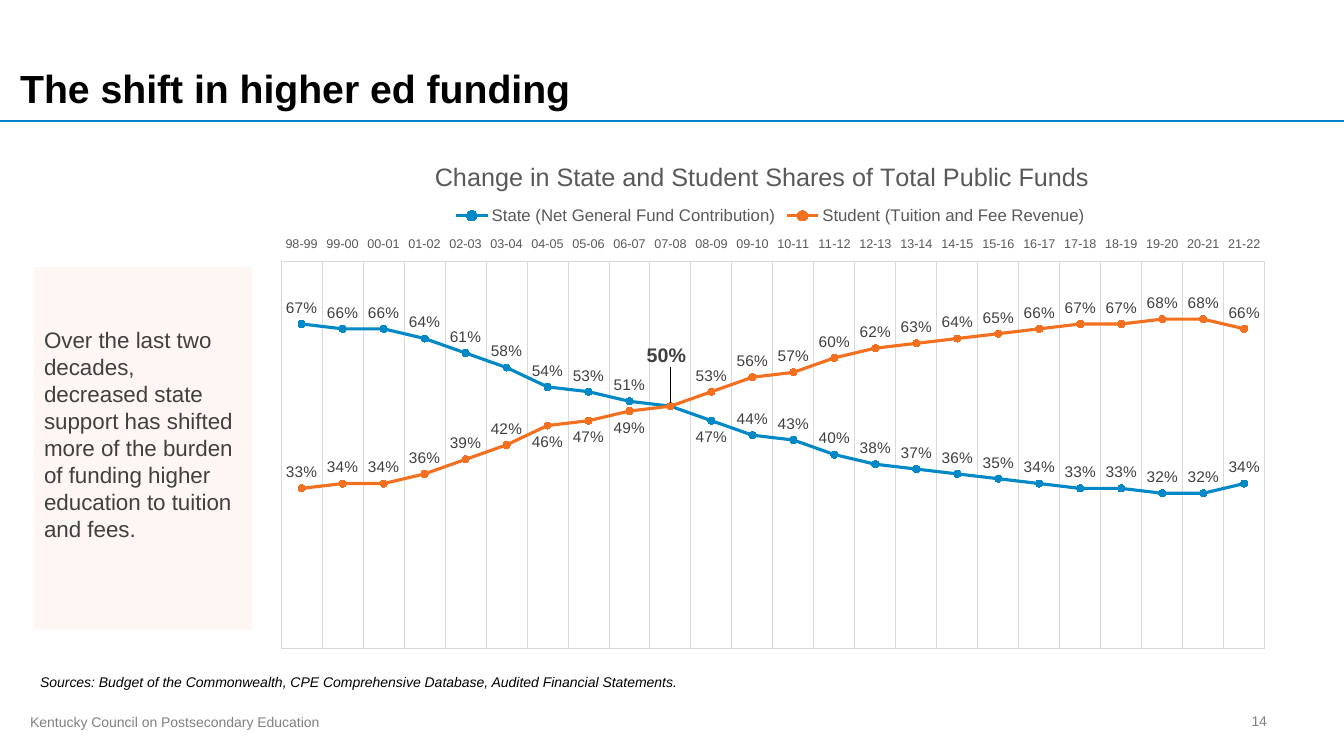
"""Build the slide on state and student shares of higher education funding."""
from lxml.etree import SubElement
from pptx import Presentation
from pptx.chart.data import CategoryChartData as Data
from pptx.dml.color import RGBColor as RGB
from pptx.enum.chart import XL_CHART_TYPE as Kind, XL_LABEL_POSITION as Spot
from pptx.enum.chart import XL_LEGEND_POSITION as Side, XL_MARKER_STYLE as Mark
from pptx.enum.chart import XL_TICK_LABEL_POSITION as Tick, XL_TICK_MARK as Notch
from pptx.enum.shapes import MSO_CONNECTOR as Wire, MSO_SHAPE as Form
from pptx.enum.text import MSO_ANCHOR as Hold, PP_ALIGN as Align
from pptx.oxml import parse_xml
from pptx.oxml.ns import nsdecls, qn
from pptx.util import Cm, Pt

TITLE = "Change in State and Student Shares of Total Public Funds"
NOTE = ("Over the last two decades, decreased state support has shifted more of the "
        "burden of funding higher education to tuition and fees.")
YEARS = [f"{y % 100:02}-{(y + 1) % 100:02}" for y in range(1998, 2022)]
STATE = [67, 66, 66, 64, 61, 58, 54, 53, 51, 50, 47, 44,
         43, 40, 38, 37, 36, 35, 34, 33, 33, 32, 32, 34]
SHARES = [
    {"name": "State (Net General Fund Contribution)", "vals": STATE,
     "color": "state", "below": [10]},
    {"name": "Student (Tuition and Fee Revenue)", "vals": [100 - v for v in STATE],
     "color": "fees", "below": [6, 7, 8]},
]
CROSS = 9
THEME = {
    "font": "Arial",
    "color": {"state": "0088C7", "fees": "F37021", "rule": "0085C3", "panel": "FDE2D3",
              "grid": "D9D9D9", "ink": "000000", "dark": "404040", "mid": "595959",
              "soft": "808080"},
    "size": {"head": 28, "title": 18, "note": 16, "cross": 14, "key": 12,
             "label": 11, "small": 10, "year": 9},
}
TEXTS = [
    {"text": "Kentucky Council on Postsecondary Education",
     "box": (0.51, 17.86, 21.59, 0.69), "pad": (0.25, 0.13, 0.25, 0.13),
     "size": "small", "color": "soft"},
    {"text": "The shift in higher ed funding",
     "box": (0, 0, 33.87, 3.05), "pad": (0.51, 0.13, 0.51, 0.25),
     "size": "head", "color": "ink", "hold": Hold.BOTTOM, "font": {"bold": True}},
    {"text": "14", "box": (30.76, 17.65, 1.42, 1.02), "pad": (0.25, 0.13, 0.25, 0.13),
     "size": "small", "color": "soft", "hold": Hold.MIDDLE, "align": Align.RIGHT},
    {"text": "Sources: Budget of the Commonwealth, CPE Comprehensive Database, "
             "Audited Financial Statements.",
     "box": (0.76, 16.71, 32.26, 0.84), "pad": (0.25, 0.25, 0.25, 0.13),
     "size": "small", "color": "ink", "font": {"italic": True}},
]
PANEL = {"text": NOTE, "box": (0.86, 6.73, 5.49, 9.14), "pad": (0.25, 1.5, 0.25, 0.13),
         "size": "note", "color": "dark"}
CHART = (6.78, 3.38, 25.4, 13.34)


def tint(name):
    return RGB.from_string(THEME["color"][name])


def apply(item, form):
    for key, val in form.items():
        setattr(item, key, val)


def style(font, size, color, **more):
    apply(font, {"name": THEME["font"], "size": Pt(THEME["size"][size]),
                 "bold": False, **more})
    font.color.rgb = tint(color)


def stroke(line, color, width):
    line.color.rgb = tint(color)
    line.width = Pt(width)


def write(shape, part):
    frame = shape.text_frame
    sides = ("margin_left", "margin_top", "margin_right", "margin_bottom")
    apply(frame, {"word_wrap": True, "vertical_anchor": part.get("hold", Hold.TOP),
                  **dict(zip(sides, map(Cm, part["pad"])))})
    para = frame.paragraphs[0]
    para.alignment = part.get("align", Align.LEFT)
    run = para.add_run()
    run.text = part["text"]
    style(run.font, part["size"], part["color"], **part.get("font", {}))


def place(spot, after=None, inner=False, **nums):
    """Set a manual layout on a chart part."""
    for old in spot.findall(qn("c:layout")):
        spot.remove(old)
    tags = '<c:layoutTarget val="inner"/>' if inner else ""
    if after != "c:idx":
        tags += '<c:xMode val="edge"/><c:yMode val="edge"/>'
    tags += "".join(f'<c:{key} val="{val}"/>' for key, val in nums.items())
    node = parse_xml(f'<c:layout {nsdecls("c")}><c:manualLayout>{tags}'
                     "</c:manualLayout></c:layout>")
    if after:
        spot.find(qn(after)).addnext(node)
    else:
        spot.insert(0, node)


def find(row, num):
    return row._element.xpath(f"c:dLbls/c:dLbl[c:idx/@val={num}]")[0]


def draw(slide):
    data = Data(number_format="0%")
    data.categories = YEARS
    for share in SHARES:
        data.add_series(share["name"], [v / 100 for v in share["vals"]])
    chart = slide.shapes.add_chart(Kind.LINE_MARKERS, *map(Cm, CHART), data).chart
    style(chart.font, "small", "ink")

    chart.has_title = True
    run = chart.chart_title.text_frame.paragraphs[0].add_run()
    run.text = TITLE
    style(run.font, "title", "mid")
    place(chart.chart_title._element, "c:tx", x=0.16, y=0.04)
    chart.has_legend = True
    apply(chart.legend, {"position": Side.TOP, "include_in_layout": False})
    style(chart.legend.font, "key", "mid")
    place(chart.legend._element, "c:legendPos", x=0.18, y=0.13)
    place(chart._chartSpace.chart.plotArea, inner=True, x=0.012, y=0.24, w=0.976, h=0.731)

    years, funds = chart.category_axis, chart.value_axis
    apply(years, {"tick_label_position": Tick.HIGH, "major_tick_mark": Notch.NONE})
    apply(funds, {"tick_label_position": Tick.NONE, "major_tick_mark": Notch.NONE,
                  "minimum_scale": 0, "maximum_scale": 0.8, "major_unit": 0.8})
    for axis in (years, funds):
        axis.has_major_gridlines = True
        stroke(axis.major_gridlines.format.line, "grid", 0.75)
    stroke(years.format.line, "grid", 0.75)
    funds.format.line.fill.background()
    style(years.tick_labels.font, "year", "mid")

    plot = chart.plots[0]
    plot.vary_by_categories = False
    for row, share in zip(plot.series, SHARES):
        row.smooth = False
        stroke(row.format.line, share["color"], 2.25)
        apply(row.marker, {"style": Mark.CIRCLE, "size": 5})
        row.marker.format.fill.solid()
        row.marker.format.fill.fore_color.rgb = tint(share["color"])
        stroke(row.marker.format.line, share["color"], 0.75)
        apply(row.data_labels, {"show_value": True, "position": Spot.ABOVE,
                                "number_format": "0%", "number_format_is_linked": False})
        style(row.data_labels.font, "label", "dark")
        for num in share["below"]:
            label = row.points[num].data_label
            label.position = Spot.BELOW
            style(label.font, "label", "dark")

    state, fees = plot.series
    label = state.points[CROSS].data_label
    label.position = Spot.ABOVE
    style(label.font, "cross", "dark", bold=True)
    place(find(state, CROSS), "c:idx", x=-0.004, y=-0.06)
    fees.points[CROSS].data_label.position = Spot.ABOVE
    node = find(fees, CROSS)
    for part in node[1:]:
        node.remove(part)
    SubElement(node, qn("c:delete")).set("val", "1")


def main():
    deck = Presentation()
    apply(deck, {"slide_width": Cm(33.87), "slide_height": Cm(19.05)})
    slide = deck.slides.add_slide(deck.slide_layouts[6])
    shapes = slide.shapes
    rule = shapes.add_connector(Wire.STRAIGHT, 0, Cm(3.05), Cm(33.87), Cm(3.05))
    stroke(rule.line, "rule", 1.5)
    SubElement(rule._element.spPr, qn("a:effectLst"))
    for part in TEXTS:
        write(shapes.add_textbox(*map(Cm, part["box"])), part)
    draw(slide)
    panel = shapes.add_shape(Form.RECTANGLE, *map(Cm, PANEL["box"]))
    panel.shadow.inherit = False
    panel.fill.solid()
    panel.fill.fore_color.rgb = tint("panel")
    shade = panel._element.spPr.find(qn("a:solidFill"))[0]
    SubElement(shade, qn("a:alpha")).set("val", "28000")
    panel.line.fill.background()
    write(panel, PANEL)
    deck.save("out.pptx")


if __name__ == "__main__":
    main()
